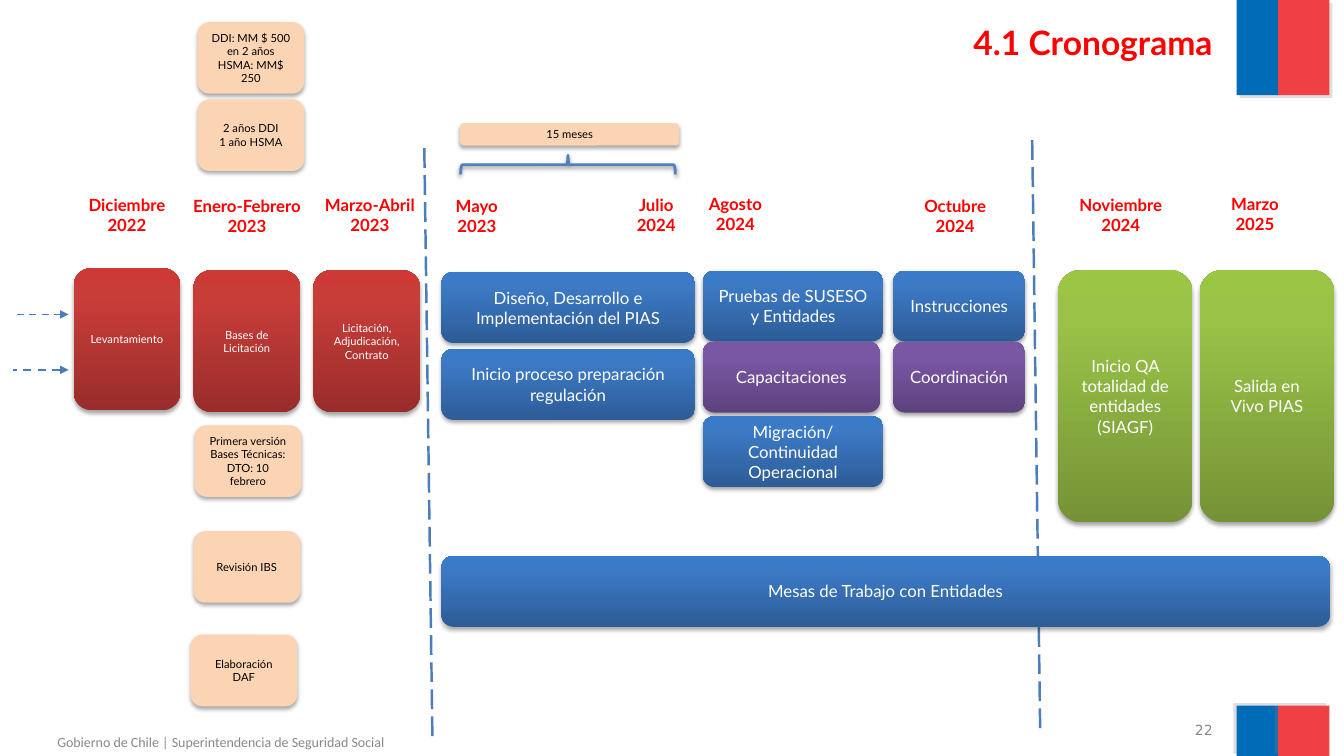
import copy
from dataclasses import dataclass
from typing import Optional

import lxml.etree
import pptx
import pptx.dml.color
import pptx.enum.dml
import pptx.enum.shapes
import pptx.enum.text
import pptx.oxml.ns
import pptx.util

Pt = pptx.util.Pt
qn = pptx.oxml.ns.qn
SHAPE = pptx.enum.shapes.MSO_SHAPE
ALIGN = pptx.enum.text.PP_ALIGN
ANCHOR = pptx.enum.text.MSO_ANCHOR
DASH = pptx.enum.dml.MSO_LINE

COLOURS = {
    "flag_blue": "006CB7", "flag_red": "EF4144", "red": "FF0000",
    "grey": "898989", "white": "FFFFFF", "black": "000000",
    "peach": "FBD4B4", "divider": "4A7DBA", "brace": "4F81BD",
}
GRADIENTS = {
    "tender": ("992D2B", "C93D39", "CD3A36"),
    "build": ("2D5C97", "3C7AC5", "397BC9"),
    "train": ("5D427D", "7A57A5", "7A56A7"),
    "launch": ("759336", "99C247", "9BC545"),
}
STOP_POSITIONS = (0, 0.8, 1)
SMALL = {"name": "Lato", "size": Pt(8), "bold": False}
MEDIUM = {"name": "Lato", "size": Pt(12), "bold": False}
MONTH = {"name": "Lato", "size": Pt(12), "bold": True}
TITLE = {"name": "Lato", "size": Pt(24), "bold": True}
FOOTER = {"name": "Calibri", "size": Pt(10), "bold": False}
NUMBER = {"name": "DejaVu Sans", "size": Pt(10), "bold": False}

STAGE_H, TENDER_W, TENDER_H, TENDER_STEP = 50.7, 76.3, 101.5, 85.65
NOTE_H = 51.1
LAUNCH_W, LAUNCH_H = 96, 180
BUILD_X, TEST_X, RULES_X = 315.3, 501.9, 638
ROW_Y = 193.3


@dataclass(frozen=True)
class Shadow:
    colour: str
    alpha: int
    blur: float
    distance: float
    angle: int


@dataclass(frozen=True)
class Box:
    text: str
    style: str
    x: float
    y: float
    w: float
    h: float


@dataclass(frozen=True)
class Month:
    name: str
    year: int
    x: float
    y: float
    w: float


@dataclass(frozen=True)
class Line:
    x1: float
    y1: float
    x2: float
    y2: float
    width: float
    dash: object
    arrow: Optional[str] = None


BOX_SHADOW = Shadow("000000", 35, 3.1, 1.8, 90)
BRACE_SHADOW = Shadow("000000", 38, 3.1, 1.6, 90)

LINES = [
    Line(737.3, 100.1, 743, 521.3, 1.75, DASH.LONG_DASH),
    Line(303.1, 105.8, 308.9, 527.8, 1.75, DASH.LONG_DASH),
    Line(49, 224.6, 9.4, 224.6, 1.25, DASH.DASH, "triangle"),
    Line(49, 264.2, 9.4, 264.2, 1.5, DASH.DASH, "triangle"),
]
TENDERS = [("Levantamiento", 191.5), ("Bases de Licitación", 193),
           ("Licitación, Adjudicación, Contrato", 193)]
NOTES = [
    ("DDI: MM $ 500 en 2 años\nHSMA: MM$ 250", 141.1, 15.8),
    ("2 años DDI\n1 año HSMA", 141.1, 71),
    ("Primera versión Bases Técnicas: DTO: 10 febrero", 139, 303.8),
    ("Revisión IBS", 138.2, 379.4),
    ("Elaboración DAF", 136.1, 453.4),
]
BOXES = [Box(text, "tender", 52.6 + i * TENDER_STEP, y, TENDER_W, TENDER_H)
         for i, (text, y) in enumerate(TENDERS)]
BOXES += [Box(text, "peach", x, y, TENDER_W, NOTE_H) for text, x, y in NOTES]
BOXES += [
    Box("15 meses", "peach", 328.7, 88, 156.5, 16),
    Box("Instrucciones", "build", RULES_X, ROW_Y, 94.3, STAGE_H),
    Box("Pruebas de SUSESO y Entidades", "build", TEST_X, ROW_Y, 129.2, STAGE_H),
    Box("Capacitaciones", "train", TEST_X, ROW_Y + STAGE_H, 126.7, STAGE_H),
    Box("Coordinación", "train", RULES_X, ROW_Y + STAGE_H, 94.3, STAGE_H),
    Box("Migración/Continuidad Operacional", "build", TEST_X, 297.2, 129.2, STAGE_H),
    Box("Diseño, Desarrollo e Implementación del PIAS", "build", BUILD_X, 194.3, 181.2, STAGE_H),
    Box("Inicio proceso preparación regulación", "build", BUILD_X, 249.2, 181.2, STAGE_H),
    Box("Mesas de Trabajo con Entidades", "build", BUILD_X, 397, 634.6, STAGE_H),
    Box("Inicio QA totalidad de entidades (SIAGF)", "launch", 755.8, 193, LAUNCH_W, LAUNCH_H),
    Box("Salida en Vivo PIAS", "launch", 857, 193, LAUNCH_W, LAUNCH_H),
]
MONTHS = [
    Month("Diciembre", 2022, 31.7, 135.4, 118),
    Month("Enero-Febrero", 2023, 117.4, 136.1, 118),
    Month("Marzo-Abril", 2023, 205.2, 135.4, 118),
    Month("Mayo", 2023, 281.6, 136.1, 118),
    Month("Julio", 2024, 389.6, 135.4, 158.4),
    Month("Agosto", 2024, 481, 134.6, 88.6),
    Month("Octubre", 2024, 638, 136.1, 88.6),
    Month("Noviembre", 2024, 721.4, 135.4, 158.4),
    Month("Marzo", 2025, 837.4, 134.6, 118),
]


def rgb(value: str):
    return pptx.dml.color.RGBColor.from_string(value)


def write(tf, text: str, font: dict, colour: str, align, anchor) -> None:
    settings = {"word_wrap": True, "vertical_anchor": anchor,
                "auto_size": pptx.enum.text.MSO_AUTO_SIZE.NONE}
    for key, value in settings.items():
        setattr(tf, key, value)
    for i, line in enumerate(text.split("\n")):
        p = tf.add_paragraph() if i else tf.paragraphs[0]
        p.alignment = align
        r = p.add_run()
        r.text = line
        for key, value in font.items():
            setattr(r.font, key, value)
        r.font.color.rgb = rgb(COLOURS[colour])


def add_label(s, frame: tuple, text: str, font: dict, colour: str, align, anchor) -> None:
    sp = s.shapes.add_textbox(*map(Pt, frame))
    write(sp.text_frame, text, font, colour, align, anchor)


def cast_shadow(sp, shadow: Shadow) -> None:
    sp.shadow.inherit = False
    effects = sp._element.spPr.find(qn("a:effectLst"))
    outer = lxml.etree.SubElement(
        effects, qn("a:outerShdw"), blurRad=str(Pt(shadow.blur)), dist=str(Pt(shadow.distance)),
        dir=str(shadow.angle * 60000), rotWithShape="0")
    colour = lxml.etree.SubElement(outer, qn("a:srgbClr"), val=shadow.colour)
    lxml.etree.SubElement(colour, qn("a:alpha"), val=str(shadow.alpha * 1000))


def paint(sp, style: str) -> None:
    if style in COLOURS:
        sp.fill.solid()
        sp.fill.fore_color.rgb = rgb(COLOURS[style])
        return
    sp.fill.gradient()
    sp.fill.gradient_angle = 90
    stops = sp._element.spPr.find(".//" + qn("a:gsLst"))
    stops.append(copy.deepcopy(stops[-1]))
    for stop, position, colour in zip(sp.fill.gradient_stops, STOP_POSITIONS, GRADIENTS[style]):
        stop.position = position
        stop.color.rgb = rgb(colour)


def add_panel(s, kind, frame: tuple, style: str, shadow: Shadow):
    sp = s.shapes.add_shape(kind, *map(Pt, frame))
    paint(sp, style)
    sp.line.fill.background()
    cast_shadow(sp, shadow)
    return sp


def add_box(s, box: Box) -> None:
    sp = add_panel(s, SHAPE.ROUNDED_RECTANGLE, (box.x, box.y, box.w, box.h), box.style, BOX_SHADOW)
    font = SMALL if box.style in ("peach", "tender") else MEDIUM
    colour = "black" if box.style == "peach" else "white"
    write(sp.text_frame, box.text, font, colour, ALIGN.CENTER, ANCHOR.MIDDLE)


def add_line(s, line: Line) -> None:
    ends = map(Pt, (line.x1, line.y1, line.x2, line.y2))
    sp = s.shapes.add_connector(pptx.enum.shapes.MSO_CONNECTOR.STRAIGHT, *ends)
    sp.line.color.rgb = rgb(COLOURS["divider"])
    sp.line.width = Pt(line.width)
    sp.line.dash_style = line.dash
    if line.arrow:
        lxml.etree.SubElement(sp.line._get_or_add_ln(), qn("a:headEnd"), type=line.arrow)
    lxml.etree.SubElement(sp._element.spPr, qn("a:effectLst"))


def add_brace(s) -> None:
    sp = s.shapes.add_shape(SHAPE.RIGHT_BRACE, *map(Pt, (398.9, 41, 13.7, 153.4)))
    sp.rotation = 270
    sp.fill.background()
    sp.line.color.rgb = rgb(COLOURS["brace"])
    sp.line.width = Pt(2)
    cast_shadow(sp, BRACE_SHADOW)


def main() -> None:
    prs = pptx.Presentation()
    prs.slide_width, prs.slide_height = Pt(960), Pt(540)
    s = prs.slides.add_slide(prs.slide_layouts[5])
    for y, h, angle in ((0, 67.9, 45), (504, 36, 215)):
        for x, w, style in ((883.4, 29.5, "flag_blue"), (912.9, 36.7, "flag_red")):
            add_panel(s, SHAPE.RECTANGLE, (x, y, w, h), style, Shadow("808080", 25, 0, 3, angle))
    add_label(s, (649.4, 514, 223.9, 15), "22", NUMBER, "grey", ALIGN.RIGHT, ANCHOR.MIDDLE)
    add_label(s, (-8.6, 517, 290.2, 26), "Gobierno de Chile | Superintendencia de Seguridad Social",
              FOOTER, "grey", ALIGN.RIGHT, ANCHOR.MIDDLE)
    title = s.shapes.title
    for key, value in {"left": 15.8, "top": 12.2, "width": 857.5, "height": 90}.items():
        setattr(title, key, Pt(value))
    write(title.text_frame, "4.1 Cronograma", TITLE, "red", ALIGN.RIGHT, ANCHOR.TOP)
    for line in LINES:
        add_line(s, line)
    for box in BOXES:
        add_box(s, box)
    for month in MONTHS:
        add_label(s, (month.x, month.y, month.w, 36), f"{month.name}\n{month.year}",
                  MONTH, "red", ALIGN.CENTER, ANCHOR.TOP)
    add_brace(s)
    prs.save("out.pptx")


if __name__ == "__main__":
    main()
